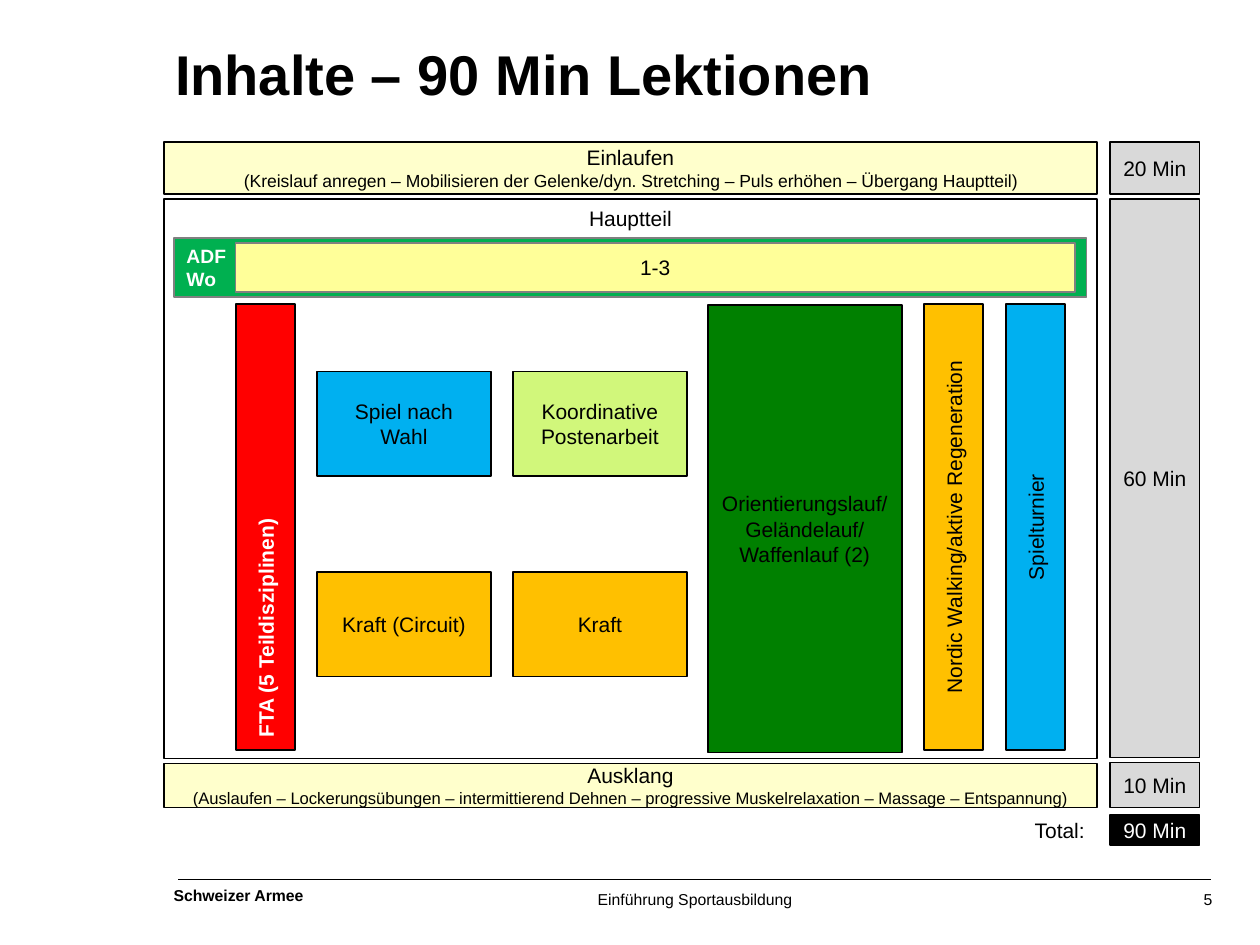
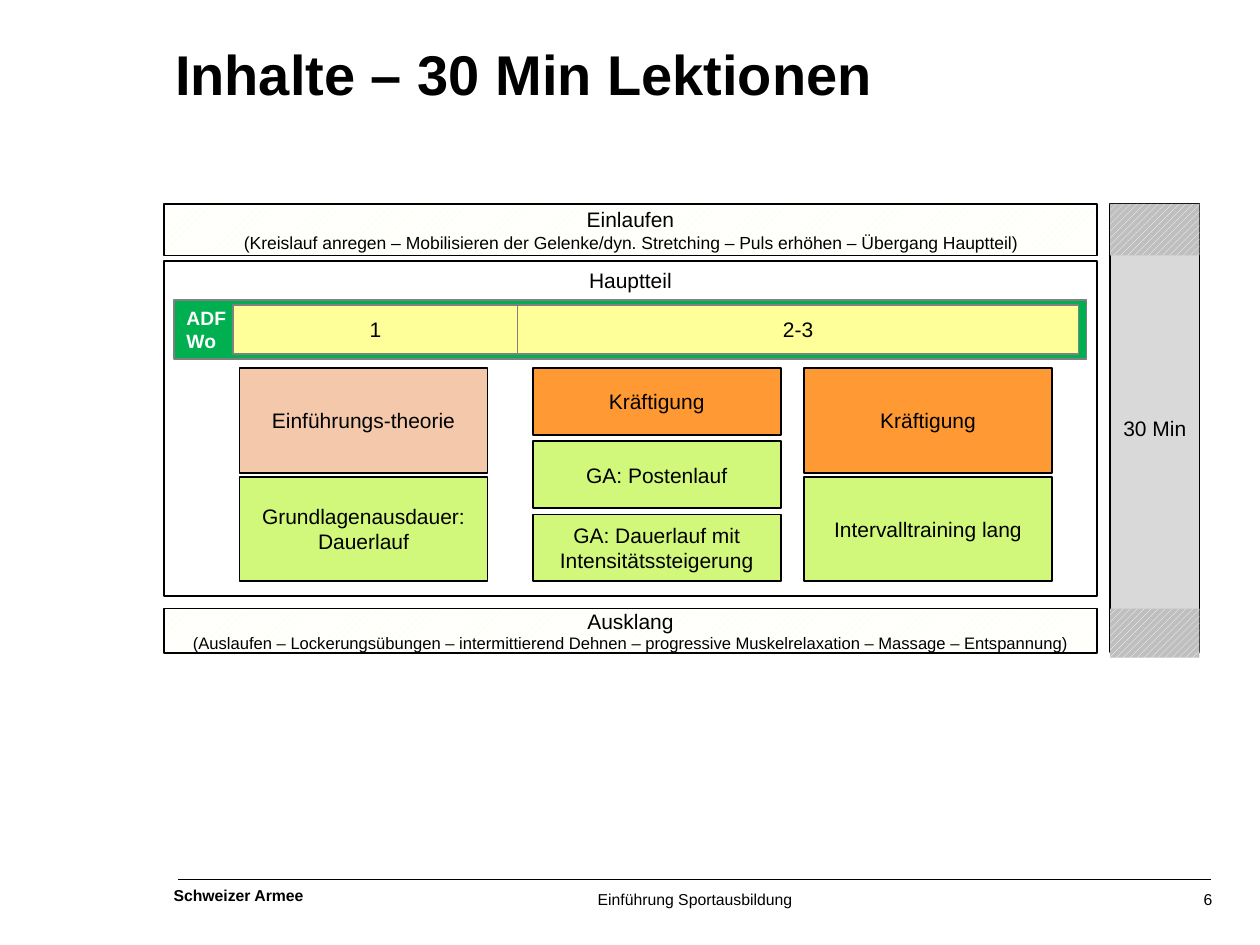
from lxml import etree
from pptx import Presentation
from pptx.dml.color import RGBColor
from pptx.enum.dml import MSO_PATTERN
from pptx.enum.shapes import MSO_CONNECTOR, MSO_SHAPE
from pptx.enum.text import MSO_ANCHOR, MSO_AUTO_SIZE, PP_ALIGN
from pptx.oxml.ns import qn
from pptx.util import Cm, Pt

RECTANGLE = MSO_SHAPE.RECTANGLE
STRAIGHT = MSO_CONNECTOR.STRAIGHT
HATCH = MSO_PATTERN.WIDE_UPWARD_DIAGONAL
TOP, MIDDLE = MSO_ANCHOR.TOP, MSO_ANCHOR.MIDDLE
LEFT, CENTER, RIGHT = PP_ALIGN.LEFT, PP_ALIGN.CENTER, PP_ALIGN.RIGHT
NO_AUTOFIT = MSO_AUTO_SIZE.NONE
TITLE_ONLY = 5

# Palette
BLACK, WHITE, EDGE_GRAY = "000000", "FFFFFF", "808080"
CREAM, YELLOW, LIGHT_GRAY, GRAY = "FFFFCC", "FFFF99", "D9D9D9", "BFBFBF"
WEEK_GREEN, DARK_GREEN, LIME = "00B050", "008000", "D1F77B"
RED, AMBER, ORANGE, PEACH, BLUE = "FF0000", "FFC000", "FF9933", "F4C8AA", "00B0F0"

# Shared grid, in centimetres
PLAN_LEFT, PLAN_WIDTH = 3.3, 18.82
TIME_LEFT, TIME_WIDTH = 22.38, 1.8
WARM_UP_HEIGHT, COOL_DOWN_HEIGHT = 1.04, 0.89

WARM_UP = ("Einlaufen\n(Kreislauf anregen – Mobilisieren der Gelenke/dyn. Stretching"
           " – Puls erhöhen – Übergang Hauptteil)")
COOL_DOWN = ("Ausklang\n(Auslaufen – Lockerungsübungen – intermittierend Dehnen"
             " – progressive Muskelrelaxation – Massage – Entspannung)")


def color(hex_text):
    return RGBColor.from_string(hex_text)


class LessonDeck:
    """Holds the style and the current slide."""

    font_name = "Arial"

    def __init__(self):
        self.deck = Presentation()
        self.deck.slide_width, self.deck.slide_height = Cm(25.4), Cm(19.05)
        self.page = None

    def add_page(self, title, number):
        self.page = self.deck.slides.add_slide(self.deck.slide_layouts[TITLE_ONLY])
        box = self.page.shapes.title
        self.place(box, 3.53, 0.79, 20.73, 2.74)
        self.fill_text(box, title, size=32, bold=True, align=LEFT, anchor=TOP, margins=(0, 0))
        self.add_footer(number)

    def add_footer(self, number):
        rule = self.page.shapes.add_connector(STRAIGHT, Cm(24.41), Cm(17.73), Cm(3.58), Cm(17.73))
        rule.line.color.rgb = color(BLACK)
        rule.line.width = Pt(0.75)
        etree.SubElement(rule._element.spPr, qn("a:effectLst"))
        footer = {"size": 9, "anchor": TOP, "margins": (0, 0), "wrap": False}
        self.label("Schweizer Armee", 3.5, 17.86, 2.67, 0.38, bold=True, align=LEFT, **footer)
        self.label("Einführung Sportausbildung", 12.05, 17.93, 3.95, 0.38, align=LEFT, **footer)
        self.label(str(number), 23.8, 17.93, 0.64, 0.38, align=RIGHT, **footer)

    @staticmethod
    def place(shape, left, top, width, height):
        shape.left, shape.top = Cm(left), Cm(top)
        shape.width, shape.height = Cm(width), Cm(height)

    def fill_text(self, shape, text, size=12, ink=BLACK, bold=False, align=CENTER,
                  anchor=MIDDLE, margins=(0.25, 0.13), wrap=True):
        frame = shape.text_frame
        frame.text = text
        frame.auto_size = NO_AUTOFIT
        frame.word_wrap = wrap
        frame.vertical_anchor = anchor
        frame.margin_left = frame.margin_right = Cm(margins[0])
        frame.margin_top = frame.margin_bottom = Cm(margins[1])
        for para in frame.paragraphs:
            para.alignment = align
            for span in para.runs:
                span.font.name = self.font_name
                span.font.size = Pt(size)
                span.font.bold = bold
                span.font.color.rgb = color(ink)

    def label(self, text, left, top, width, height, **style):
        box = self.page.shapes.add_textbox(Cm(left), Cm(top), Cm(width), Cm(height))
        self.fill_text(box, text, **style)

    def box(self, text, left, top, width, height, fill=None, edge=BLACK, edge_width=1, **style):
        box = self.page.shapes.add_shape(RECTANGLE, Cm(left), Cm(top), Cm(width), Cm(height))
        box.shadow.inherit = False
        if fill:
            box.fill.solid()
            box.fill.fore_color.rgb = color(fill)
        else:
            box.fill.background()
        if edge:
            box.line.color.rgb = color(edge)
            box.line.width = Pt(edge_width)
        else:
            box.line.fill.background()
        if text:
            self.fill_text(box, text, **style)
        return box

    def upright_bar(self, text, left, top, width, height, fill, **style):
        """A bar whose text reads upwards; the place is the one seen on the slide."""
        shift = (height - width) / 2
        bar = self.box(text, left - shift, top + shift, height, width, fill, **style)
        bar.rotation = 270

    @staticmethod
    def hatch(box, front, back):
        box.fill.patterned()
        box.fill.pattern = HATCH
        box.fill.fore_color.rgb = color(front)
        box.fill.back_color.rgb = color(back)

    def phase(self, text, top, height, detail_size, hatched=False):
        band = self.box(text, PLAN_LEFT, top, PLAN_WIDTH, height, CREAM)
        band.text_frame.paragraphs[1].runs[0].font.size = Pt(detail_size)
        if hatched:
            self.hatch(band, CREAM, WHITE)

    def duration(self, text, top, height, fill=LIGHT_GRAY, **style):
        return self.box(text, TIME_LEFT, top, TIME_WIDTH, height, fill, **style)

    def main_part(self, top, height, weeks):
        """Frame of the main part, with the band of weeks: (text, left, width)."""
        self.box("Hauptteil", PLAN_LEFT, top, PLAN_WIDTH, height, anchor=TOP)
        edge = {"edge": EDGE_GRAY, "edge_width": 0.75}
        self.box("ADF\vWo", 3.51, top + 0.79, 18.39, 1.19, WEEK_GREEN,
                 size=11, ink=WHITE, bold=True, align=LEFT, **edge)
        for text, left, width in weeks:
            self.box(text, left, top + 0.89, width, 0.99, YELLOW, **edge)

    def stack(self, left, top, width, height, gap, tiles):
        """Tiles of equal height that fill one column."""
        step = (height + gap) / len(tiles)
        for row, (text, fill) in enumerate(tiles):
            self.box(text, left, top + row * step, width, step - gap, fill)


def build_long_lesson(lesson):
    lesson.add_page("Inhalte – 90 Min Lektionen", 5)

    # Phases and their durations
    lesson.phase(WARM_UP, 2.87, WARM_UP_HEIGHT, 10)
    lesson.phase(COOL_DOWN, 15.39, COOL_DOWN_HEIGHT, 9.5)
    lesson.main_part(4.01, 11.28, [("1-3", 4.75, 16.92)])
    lesson.duration("20 Min", 2.87, WARM_UP_HEIGHT)
    lesson.duration("60 Min", 4.01, 11.26)
    lesson.duration("10 Min", 15.37, 0.91)
    lesson.duration("90 Min", 16.43, 0.61, BLACK, ink=WHITE)
    lesson.label("Total:", 20.32, 16.43, 1.8, 0.61, align=RIGHT)

    # Sports over the full height
    lesson.upright_bar("FTA (5 Teildisziplinen)", 4.76, 6.13, 1.19, 8.99, RED,
                       ink=WHITE, bold=True, align=LEFT)
    lesson.box("Orientierungslauf/\nGeländelauf/\nWaffenlauf (2)",
               14.27, 6.15, 3.91, 9.02, DARK_GREEN)
    lesson.upright_bar("Nordic Walking/aktive Regeneration", 18.63, 6.13, 1.19, 8.99, AMBER)
    lesson.upright_bar("Spielturnier", 20.28, 6.13, 1.19, 8.99, BLUE)

    # Two by two tiles
    columns = [
        (6.39, [("Spiel nach Wahl", BLUE), ("Kraft (Circuit)", AMBER)]),
        (10.34, [("Koordinative Postenarbeit", LIME), ("Kraft", AMBER)]),
    ]
    for left, tiles in columns:
        lesson.stack(left, 7.49, 3.51, 6.15, 1.93, tiles)


def build_short_lesson(lesson):
    lesson.add_page("Inhalte – 30 Min Lektionen", 6)

    # Phases and their duration, hatched where optional
    lesson.phase(WARM_UP, 4.11, WARM_UP_HEIGHT, 10, hatched=True)
    lesson.phase(COOL_DOWN, 12.27, COOL_DOWN_HEIGHT, 9.5, hatched=True)
    lesson.main_part(5.26, 6.76, [("1", 4.7, 5.74), ("2-3", 10.44, 11.3)])
    lesson.duration("30 Min", 4.11, 9.04)
    for top, height in [(4.11, WARM_UP_HEIGHT), (12.27, 0.99)]:
        lesson.hatch(lesson.duration("", top, height, edge=None), WHITE, GRAY)

    # Columns of training contents
    columns = [
        (4.83, 0.08, [("Einführungs-theorie", PEACH),
                      ("Grundlagenausdauer: Dauerlauf", LIME)]),
        (10.74, 0.13, [("Kräftigung", ORANGE), ("GA: Postenlauf", LIME),
                       ("GA: Dauerlauf mit Intensitätssteigerung", LIME)]),
        (16.21, 0.08, [("Kräftigung", ORANGE), ("Intervalltraining lang", LIME)]),
    ]
    for left, gap, tiles in columns:
        lesson.stack(left, 7.42, 5, 4.3, gap, tiles)


def main():
    lesson = LessonDeck()
    build_long_lesson(lesson)
    build_short_lesson(lesson)
    lesson.deck.save("out.pptx")


if __name__ == "__main__":
    main()
